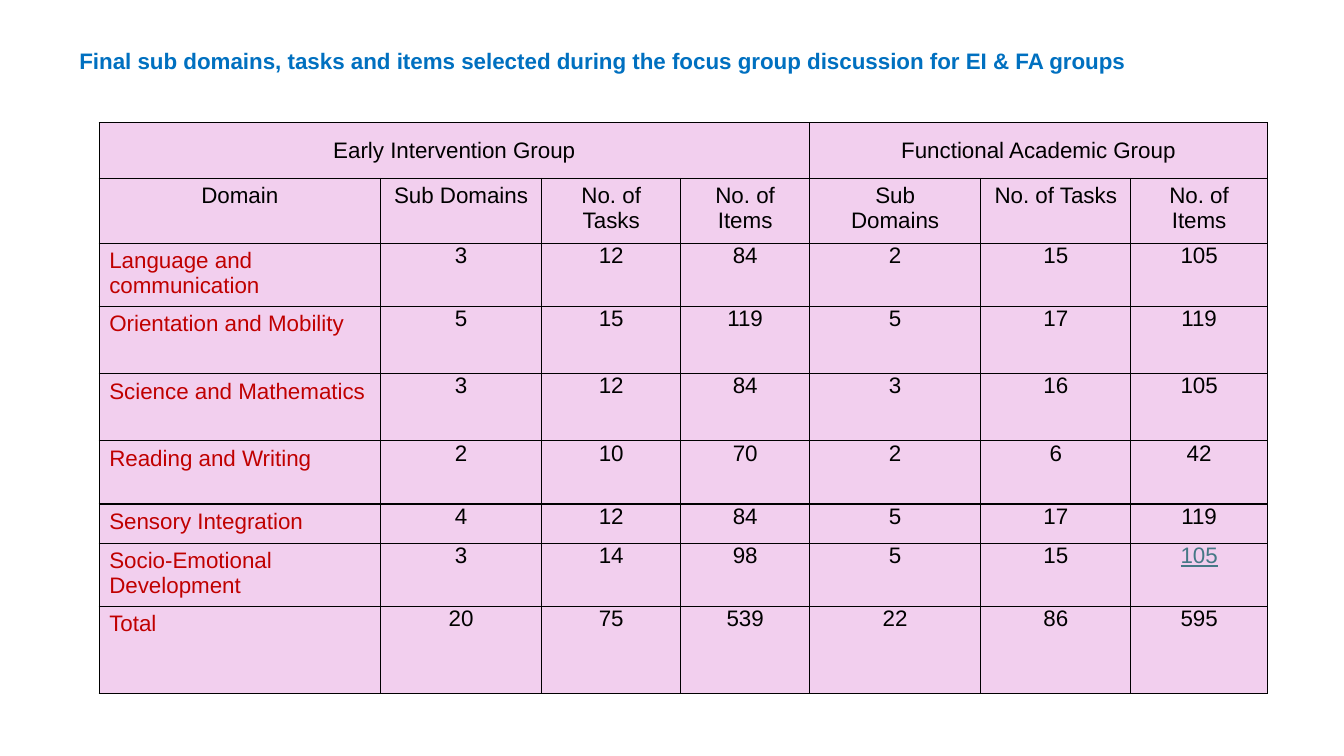
from dataclasses import dataclass

from lxml.etree import SubElement
from pptx import Presentation
from pptx.dml.color import RGBColor
from pptx.enum.text import MSO_ANCHOR, MSO_AUTO_SIZE, PP_ALIGN
from pptx.oxml.ns import qn
from pptx.util import Cm, Pt


@dataclass(frozen=True)
class Theme:
    font: str = "Arial"
    size: int = 16
    title: str = "0070C0"
    ink: str = "000000"
    label: str = "C00000"
    link: str = "467886"
    cell: str = "F2CFEE"
    edge: int = 1


THEME = Theme()
TITLE = ("Final sub domains, tasks and items selected during the "
         "focus group discussion for EI & FA groups")
GROUPS = [("Early Intervention Group", 0, 3),
          ("Functional Academic Group", 4, 6)]
HEADS = ["Domain", "Sub Domains", "No. of Tasks", "No. of Items",
         "Sub\nDomains", "No. of Tasks", "No. of Items"]
DOMAINS = [
    ("Language and communication", 3, 12, 84, 2, 15, 105),
    ("Orientation and Mobility", 5, 15, 119, 5, 17, 119),
    ("Science and Mathematics", 3, 12, 84, 3, 16, 105),
    ("Reading and Writing", 2, 10, 70, 2, 6, 42),
    ("Sensory Integration", 4, 12, 84, 5, 17, 119),
    ("Socio-Emotional Development", 3, 14, 98, 5, 15, 105),
    ("Total", 20, 75, 539, 22, 86, 595),
]
LINKED = ("Socio-Emotional Development", 6)
WIDTHS = [7.09, 4.06, 3.51, 3.24, 4.32, 3.78, 3.44]
HEIGHTS = [1.41, 1.64, 1.59, 1.69, 1.69, 1.59, 0.99, 1.59, 2.2]


def write(frame, text, color=THEME.ink, bold=False, under=False,
          align=PP_ALIGN.CENTER, space=1.0):
    """Fill a text frame, one paragraph to each line of the text."""
    frame.word_wrap = True
    frame.text = text
    for para in frame.paragraphs:
        para.alignment = align
        para.line_spacing = space
        for run in para.runs:
            font = run.font
            font.name, font.size = THEME.font, Pt(THEME.size)
            font.bold, font.underline = bold, under
            font.color.rgb = RGBColor.from_string(color)


def add_title(slide):
    box = slide.shapes.add_textbox(Cm(1.75), Cm(0.79), Cm(31.06), Cm(1.14))
    frame = box.text_frame
    write(frame, TITLE, color=THEME.title, bold=True,
          align=PP_ALIGN.JUSTIFY, space=1.5)
    frame.vertical_anchor = MSO_ANCHOR.MIDDLE
    frame.auto_size = MSO_AUTO_SIZE.SHAPE_TO_FIT_TEXT


def paint(cell):
    """Give a cell its four borders, then its fill."""
    props = cell._tc.get_or_add_tcPr()
    for side in ("a:lnL", "a:lnR", "a:lnT", "a:lnB"):
        line = SubElement(props, qn(side), w=str(Pt(THEME.edge)))
        fill = SubElement(line, qn("a:solidFill"))
        SubElement(fill, qn("a:srgbClr"), val=THEME.ink)
    cell.fill.solid()
    cell.fill.fore_color.rgb = RGBColor.from_string(THEME.cell)


def inset(cell, side):
    """Set equal side margins and no margin above or below."""
    cell.margin_left = cell.margin_right = Cm(side)
    cell.margin_top = cell.margin_bottom = 0


def add_grid(slide):
    """Add the empty table with its sizes, borders and fill."""
    frame = slide.shapes.add_table(
        len(HEIGHTS), len(WIDTHS), Cm(2.5), Cm(3.09),
        Cm(sum(WIDTHS)), Cm(sum(HEIGHTS)))
    table = frame.table
    table.first_row = table.horz_banding = False
    for col, width in zip(table.columns, WIDTHS):
        col.width = Cm(width)
    for row, height in zip(table.rows, HEIGHTS):
        row.height = Cm(height)
    for cell in table.iter_cells():
        paint(cell)
    return table


def fill_heads(table):
    for text, first, last in GROUPS:
        cell = table.cell(0, first)
        cell.merge(table.cell(0, last))
        cell.vertical_anchor = MSO_ANCHOR.MIDDLE
        inset(cell, 0.13)
        write(cell.text_frame, text)
    for col, text in enumerate(HEADS):
        write(table.cell(1, col).text_frame, text)


def fill_rows(table):
    for row, (name, *counts) in enumerate(DOMAINS, 2):
        write(table.cell(row, 0).text_frame, name,
              color=THEME.label, align=PP_ALIGN.LEFT)
        for col, count in enumerate(counts, 1):
            cell = table.cell(row, col)
            inset(cell, 0.18)
            linked = (name, col) == LINKED
            write(cell.text_frame, str(count), under=linked,
                  color=THEME.link if linked else THEME.ink)


def main():
    deck = Presentation()
    deck.slide_width, deck.slide_height = Cm(33.87), Cm(19.05)
    slide = deck.slides.add_slide(deck.slide_layouts[6])
    table = add_grid(slide)
    fill_heads(table)
    fill_rows(table)
    add_title(slide)
    deck.save("out.pptx")


if __name__ == "__main__":
    main()
